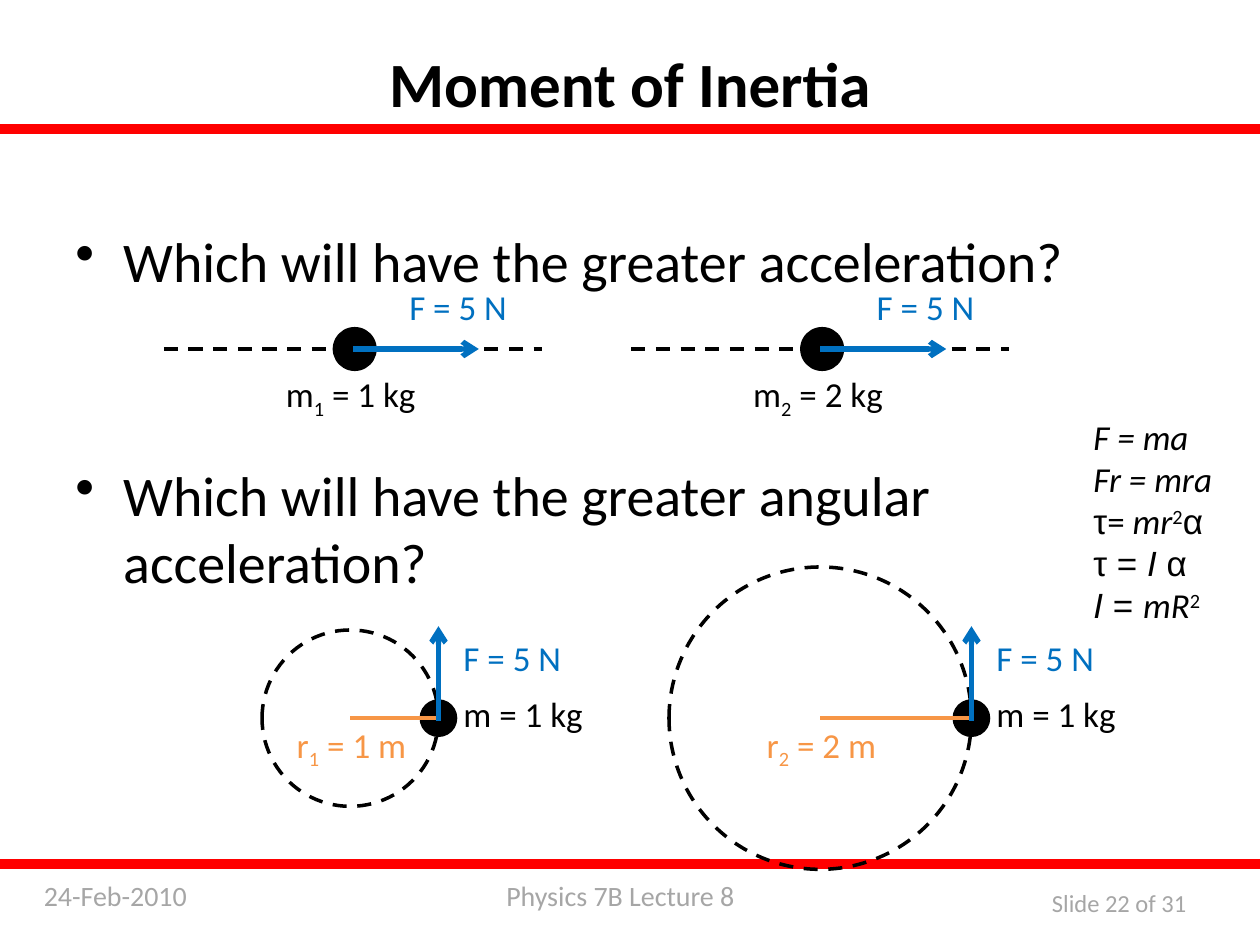
"""Build the Moment of Inertia lecture slide."""
from dataclasses import dataclass

from lxml.etree import SubElement
from pptx import Presentation
from pptx.dml.color import RGBColor
from pptx.enum.dml import MSO_LINE_DASH_STYLE as Dash
from pptx.enum.shapes import MSO_CONNECTOR as Connector
from pptx.enum.shapes import MSO_SHAPE as Shape
from pptx.enum.text import MSO_ANCHOR as Anchor
from pptx.enum.text import MSO_AUTO_SIZE as AutoSize
from pptx.enum.text import PP_ALIGN as Align
from pptx.oxml.ns import qn
from pptx.util import Inches, Pt

BLACK, RED, BLUE, ORANGE, GREY = "000000", "FF0000", "0070C0", "F79646", "A6A6A6"


def grid(*cells):
    """Turn columns and rows of a 100 by 75 grid into lengths."""
    return [Inches(cell / 10) for cell in cells]


def color(hex_string):
    """Return the colour for a hex string."""
    return RGBColor.from_string(hex_string)


@dataclass
class Run:
    """A stretch of text with what sets it apart."""

    text: str
    baseline: int = 0
    font: str = ""
    italic: bool = False


@dataclass
class Board:
    """Hold the style and the current slide, and draw each kind of element."""

    slide: object
    font: str = "Calibri"
    label_size: int = 20

    def style(self, paragraph, size, fill, align=Align.LEFT):
        """Set the common font of a paragraph."""
        paragraph.alignment = align
        paragraph.font.name = self.font
        paragraph.font.size = Pt(size)
        paragraph.font.color.rgb = color(fill)

    def title(self, text, box):
        """Place and format the title placeholder."""
        shape = self.slide.shapes.title
        shape.left, shape.top, shape.width, shape.height = grid(*box)
        frame = shape.text_frame
        frame.text, frame.vertical_anchor, frame.auto_size = text, Anchor.TOP, AutoSize.NONE
        self.style(frame.paragraphs[0], 36, BLACK, Align.CENTER)
        frame.paragraphs[0].font.bold = True

    def text(self, lines, box, fill=BLACK, size=None, align=Align.LEFT):
        """Add a text box with one list of runs for each paragraph."""
        frame = self.slide.shapes.add_textbox(*grid(*box)).text_frame
        frame.word_wrap = True
        for index, runs in enumerate(lines):
            paragraph = frame.add_paragraph() if index else frame.paragraphs[0]
            self.style(paragraph, size or self.label_size, fill, align)
            for part in runs:
                run = paragraph.add_run()
                run.text = part.text
                if part.font:
                    run.font.name = part.font
                if part.italic:
                    run.font.italic = True
                if part.baseline:
                    run.font._element.set("baseline", str(part.baseline * 1000))
        return frame

    def label(self, left, top, *runs, fill=BLACK, align=Align.LEFT):
        """Add a one-line diagram label."""
        self.text([runs], (left, top, 13, 4.4), fill, align=align)

    def bullets(self, questions, box, gap):
        """Add bulleted questions with a gap between them."""
        frame = self.text([[Run(question)] for question in questions], box, size=32)
        for index, paragraph in enumerate(frame.paragraphs):
            paragraph.space_before = Pt(gap if index else 0)
            properties = paragraph._p.get_or_add_pPr()
            properties.set("marL", str(Inches(0.38)))
            properties.set("indent", str(-Inches(0.38)))
            bullet = properties.makeelement(qn("a:buChar"), {"char": "•"})
            properties.find(qn("a:defRPr")).addprevious(bullet)

    def shape(self, kind, box, fill=None, line=None, dash=None):
        """Add a preset shape."""
        shape = self.slide.shapes.add_shape(kind, *grid(*box))
        shape.shadow.inherit = False
        if fill:
            shape.fill.solid()
            shape.fill.fore_color.rgb = color(fill)
        else:
            shape.fill.background()
        if line:
            shape.line.color.rgb = color(line)
            shape.line.width = Pt(2)
            shape.line.dash_style = dash
        else:
            shape.line.fill.background()

    def circle(self, center_x, center_y, radius, **look):
        """Add a circle around a centre."""
        box = (center_x - radius, center_y - radius, 2 * radius, 2 * radius)
        self.shape(Shape.OVAL, box, **look)

    def line(self, start, end, stroke, width=2, dash=None, arrow=False):
        """Add a straight line or an arrow."""
        connector = self.slide.shapes.add_connector(Connector.STRAIGHT, *grid(*start, *end))
        connector.line.color.rgb = color(stroke)
        connector.line.width = Pt(width)
        connector.line.dash_style = dash
        if arrow:
            SubElement(connector.line._get_or_add_ln(), qn("a:tailEnd"), type="arrow")
        SubElement(connector._element.spPr, qn("a:effectLst"))

    def force(self, start, end):
        """Add a force arrow."""
        self.line(start, end, BLUE, 3, arrow=True)

    def sliding_mass(self, center, number, mass):
        """Draw a mass pushed along a dashed track."""
        track = 27.7
        self.line((center - 15, track), (center + 15, track), BLACK, dash=Dash.DASH)
        self.circle(center + 0.15, track, 1.75, fill=BLACK)
        self.force((center, track), (center + 10, track))
        self.label(center - 6.3, 29.1, Run("m"), Run(number, -25), Run(f" = {mass} kg"))
        self.label(center + 3.5, 22.2, Run("F = 5 N"), fill=BLUE)

    def orbiting_mass(self, center, radius, number):
        """Draw a mass pushed along a dashed circle."""
        middle, edge = 57, center + radius
        self.circle(center, middle, radius, line=BLACK, dash=Dash.DASH)
        self.circle(edge, middle, 1.5, fill=BLACK)
        self.line((center, middle), (edge, middle), ORANGE)
        self.force((edge, middle + 0.2), (edge, middle - 7.3))
        self.label(edge + 1, 50, Run("F = 5 N"), fill=BLUE)
        self.label(edge + 1, 54.5, Run("m = 1 kg"))
        self.label(center - 6.4, 56.9, Run("r"), Run(number, -25), Run(f" = {number} m"),
                   fill=ORANGE, align=Align.CENTER)


def main():
    """Create and save the presentation."""
    presentation = Presentation()
    presentation.slide_width, presentation.slide_height = grid(100, 75)
    board = Board(presentation.slides.add_slide(presentation.slide_layouts[5]))

    for text, box, size in (("Physics 7B Lecture 8", (39.2, 69.2, 22, 3.7), 16),
                            ("24-Feb-2010", (2.5, 69.2, 16.7, 3.7), 16),
                            ("Slide 22 of 31", (82.5, 70, 14.5, 3.4), 14)):
        board.text([[Run(text)]], box, GREY, size)
    for top in (10, 68.3):
        board.shape(Shape.RECTANGLE, (0, top, 100, 0.5), RED, RED)

    board.title("Moment of Inertia", (5, 3, 90, 12.5))
    board.bullets(("Which will have the greater acceleration?",
                   "Which will have the greater angular acceleration?"),
                  (5, 17.5, 90, 49.5), gap=95)

    board.sliding_mass(28, "1", 1)
    board.sliding_mass(65.1, "2", 2)
    board.orbiting_mass(27.8, 7, "1")
    board.orbiting_mass(65.1, 12, "2")

    tau, alpha = Run("τ", font="Arial"), Run("α", font="Arial")
    inertia, squared = Run("Ι", font="Arial", italic=True), Run("2", 30)
    board.text([
        [Run("F = ma", italic=True)],
        [Run("Fr = mra", italic=True)],
        [tau, Run("= "), Run("mr", italic=True), squared, alpha],
        [tau, Run(" = ", font="Arial"), inertia, Run(" ", font="Arial"), alpha],
        [inertia, Run(" = ", font="Arial"), Run("mR", italic=True), squared],
    ], (85.8, 32.5, 13, 21.2))

    presentation.save("out.pptx")


if __name__ == "__main__":
    main()
